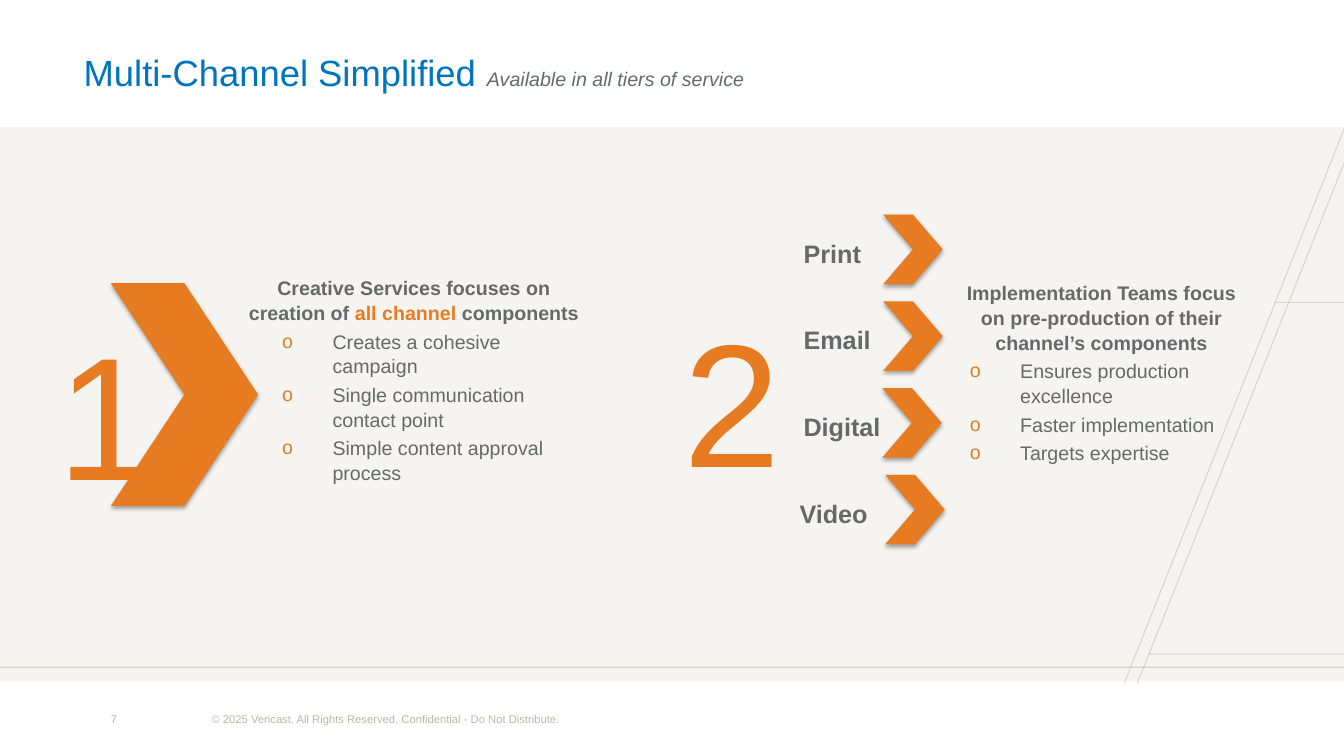
from dataclasses import dataclass

from lxml.etree import SubElement
from pptx import Presentation
from pptx.dml.color import RGBColor
from pptx.enum.shapes import MSO_CONNECTOR, MSO_SHAPE
from pptx.enum.text import MSO_ANCHOR, PP_ALIGN
from pptx.oxml.ns import qn
from pptx.util import Pt

EMU_PER_PX = 9144
ORANGE, GREY, BLUE = "E67B21", "646A6A", "0074BC"
SAND, FOOTER = "BDB6A6", "BEB7A6"


@dataclass
class Span:
    text: str
    size: int
    color: str
    bold: bool = False
    italic: bool = False


@dataclass
class Channel:
    name: str
    label_left: int
    arrow_left: int


@dataclass
class Step:
    number: str
    number_left: int
    number_top: int
    text_left: int
    text_top: int
    heading: list[Span]
    benefits: list[str]


CHANNELS = [
    Channel("Print", 797, 876),
    Channel("Email", 797, 876),
    Channel("Digital", 797, 875),
    Channel("Video", 793, 878),
]
STEPS = [
    Step("1", 32, 282, 226, 268,
         [Span("Creative Services focuses on creation of ", 14, GREY, True),
          Span("all channel ", 14, ORANGE, True),
          Span("components", 14, GREY, True)],
         ["Creates a cohesive campaign",
          "Single communication contact point",
          "Simple content approval process"]),
    Step("2", 653, 269, 908, 273,
         [Span("Implementation Teams focus", 14, GREY, True),
          Span("\von pre-production of their", 14, GREY, True),
          Span("\vchannel’s components", 14, GREY, True)],
         ["Ensures production excellence",
          "Faster implementation",
          "Targets expertise"]),
]
BACKDROP_LINES = [
    (1333, 128, 1115, 678),
    (1264, 300, 1333, 300),
    (0, 662, 1333, 662),
    (1333, 162, 1128, 678),
    (1139, 649, 1333, 649),
]


def px(length: int) -> int:
    return length * EMU_PER_PX


def rgb(color: str) -> RGBColor:
    return RGBColor.from_string(color)


def set_alpha(element, percent: int) -> None:
    for color in element.iter(qn("a:srgbClr")):
        SubElement(color, qn("a:alpha"), val=str(percent * 1000))


def add_block(page, kind, left: int, top: int, width: int, height: int, color: str):
    shape = page.shapes.add_shape(kind, px(left), px(top), px(width), px(height))
    shape.shadow.inherit = False
    shape.fill.solid()
    shape.fill.fore_color.rgb = rgb(color)
    shape.line.fill.background()
    return shape


def add_chevron(page, left: int, top: int, width: int, height: int) -> None:
    chevron = add_block(page, MSO_SHAPE.CHEVRON, left, top, width, height, ORANGE)
    effects = chevron._element.spPr.find(qn("a:effectLst"))
    shadow = SubElement(effects, qn("a:outerShdw"), blurRad="40000", dist="23000",
                        dir="5400000", rotWithShape="0")
    SubElement(shadow, qn("a:srgbClr"), val="000000")
    set_alpha(shadow, 35)


def add_line(page, x1: int, y1: int, x2: int, y2: int) -> None:
    line = page.shapes.add_connector(MSO_CONNECTOR.STRAIGHT, px(x1), px(y1), px(x2), px(y2))
    line.line.color.rgb = rgb(SAND)
    line.line.width = Pt(0.75)
    properties = line._element.spPr
    set_alpha(properties, 51)
    SubElement(properties, qn("a:effectLst"))


def add_box(page, left: int, top: int, width: int, height: int, inset: bool = False):
    box = page.shapes.add_textbox(px(left), px(top), px(width), px(height))
    frame = box.text_frame
    frame.word_wrap = True
    if not inset:
        frame.margin_left = frame.margin_right = frame.margin_top = frame.margin_bottom = 0
    return frame


def write(para, spans: list[Span], spacing: float = 1.1) -> None:
    para.line_spacing = spacing
    for span in spans:
        if span.text.startswith("\v"):
            para.add_line_break()
            line_break = para._p.findall(qn("a:br"))[-1]
            SubElement(line_break, qn("a:rPr"), sz=str(span.size * 100))
        run = para.add_run()
        run.text = span.text.lstrip("\v")
        run.font.name = "Arial"
        run.font.size = Pt(span.size)
        run.font.bold = span.bold
        run.font.italic = span.italic
        run.font.color.rgb = rgb(span.color)


def add_bullet(para) -> None:
    properties = para._p.get_or_add_pPr()
    properties.set("marL", str(px(94)))
    properties.set("indent", str(px(-50)))
    color = SubElement(properties, qn("a:buClr"))
    SubElement(color, qn("a:srgbClr"), val=ORANGE)
    SubElement(properties, qn("a:buFont"), typeface="Arial")
    SubElement(properties, qn("a:buChar"), char="o")


def add_step(page, step: Step) -> None:
    frame = add_box(page, step.text_left, step.text_top, 369, 460, inset=True)
    heading = frame.paragraphs[0]
    write(heading, step.heading, 1.05)
    heading.alignment = PP_ALIGN.CENTER
    for benefit in step.benefits:
        para = frame.add_paragraph()
        add_bullet(para)
        para.level = 1
        para.space_before = Pt(2.8)
        write(para, [Span(benefit, 14, GREY)], 1.05)
    number = add_box(page, step.number_left, step.number_top, 146, 270).paragraphs[0]
    write(number, [Span(step.number, 125, ORANGE)])
    number.alignment = PP_ALIGN.CENTER


def add_footer(page, text: str, left: int, width: int) -> None:
    frame = add_box(page, left, 693, width, 40, inset=True)
    frame.vertical_anchor = MSO_ANCHOR.MIDDLE
    write(frame.paragraphs[0], [Span(text, 8, FOOTER)], 1.0)


def main() -> None:
    deck = Presentation()
    deck.slide_width, deck.slide_height = px(1333), px(750)
    page = deck.slides.add_slide(deck.slide_layouts[6])

    backdrop = add_block(page, MSO_SHAPE.RECTANGLE, 0, 126, 1333, 550, SAND)
    set_alpha(backdrop._element.spPr, 15)
    for ends in BACKDROP_LINES:
        add_line(page, *ends)
    add_footer(page, "7", 100, 59)
    add_footer(page, "© 2025 Vericast. All Rights Reserved. Confidential - Do Not Distribute.", 200, 436)

    title = add_box(page, 83, 45, 1167, 58)
    write(title.paragraphs[0], [Span("Multi-Channel Simplified ", 26, BLUE),
                                Span("Available in all tiers of service", 14, GREY, italic=True)])

    add_chevron(page, 110, 281, 146, 221)
    for step in STEPS:
        add_step(page, step)
    for row, channel in enumerate(CHANNELS):
        top = 213 + 86 * row
        add_chevron(page, channel.arrow_left, top, 59, 69)
        label = add_box(page, channel.label_left, top + 20, 114, 57)
        write(label.paragraphs[0], [Span(channel.name, 18, GREY, True)])

    deck.save("out.pptx")


if __name__ == "__main__":
    main()
